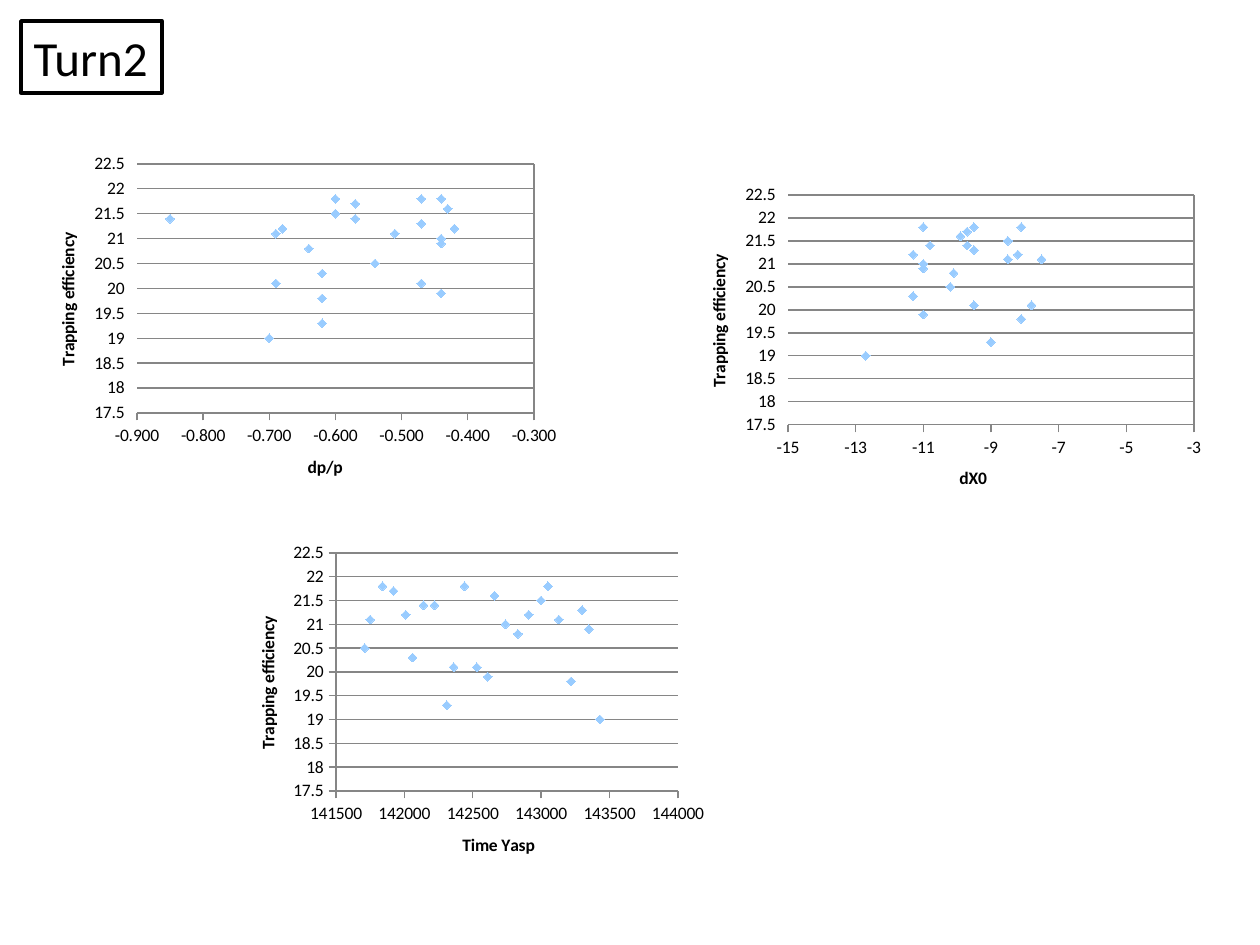
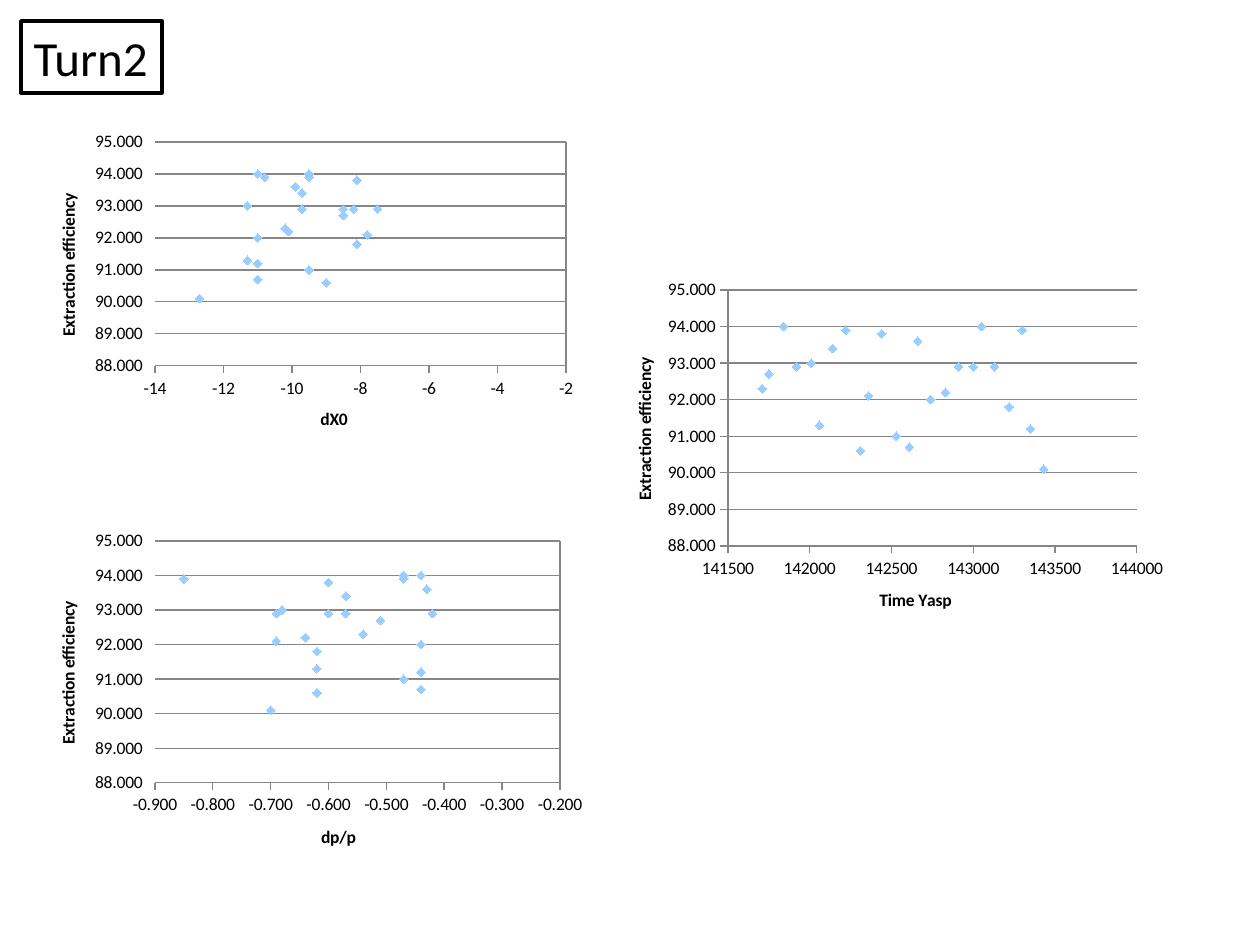
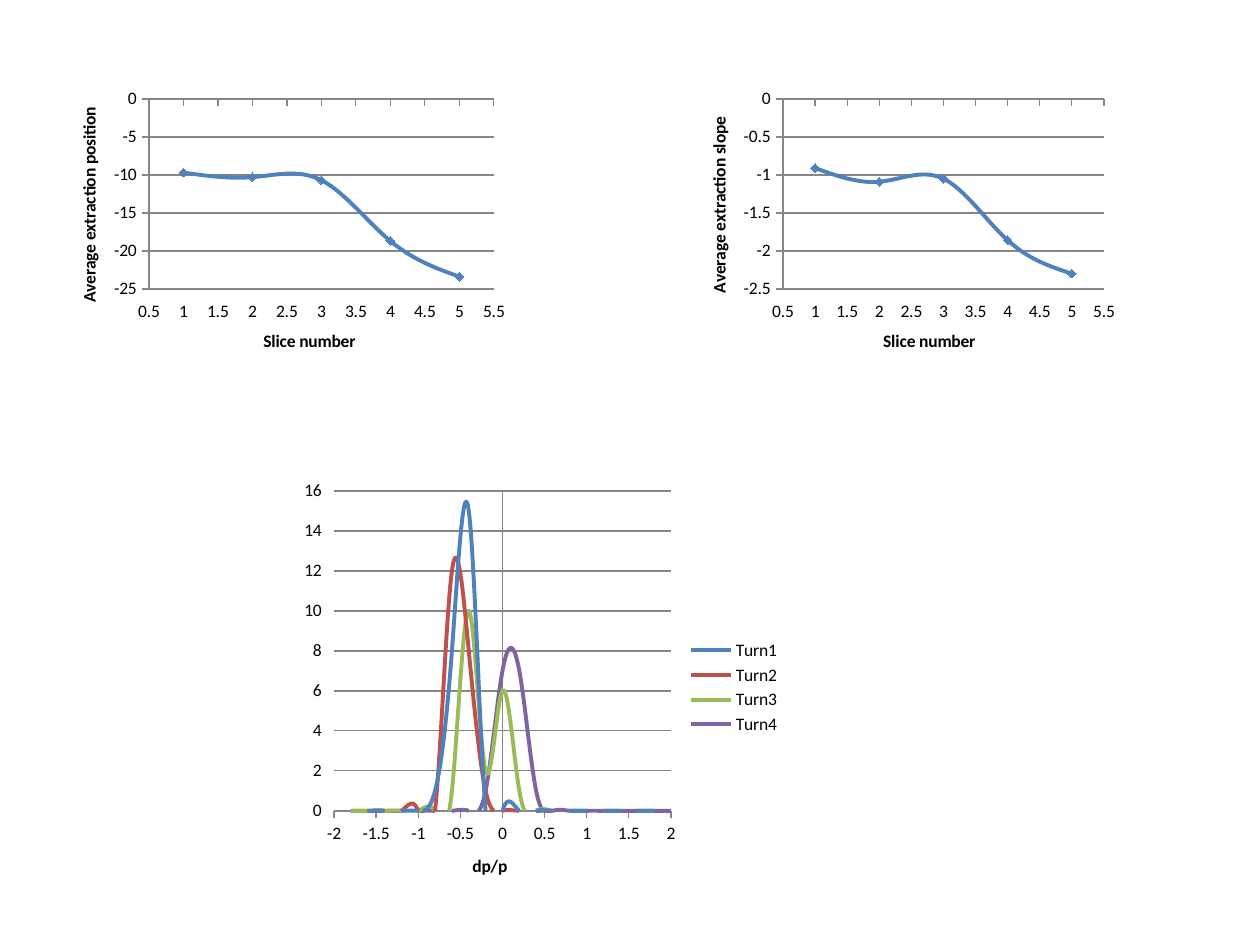
from lxml import etree
from pptx import Presentation
from pptx.chart.data import XyChartData
from pptx.dml.color import RGBColor
from pptx.enum.chart import (XL_CHART_TYPE, XL_LEGEND_POSITION, XL_MARKER_STYLE,
                             XL_TICK_LABEL_POSITION, XL_TICK_MARK)
from pptx.enum.text import MSO_ANCHOR, MSO_AUTO_SIZE, PP_ALIGN
from pptx.oxml.ns import qn
from pptx.util import Emu, Pt

PX = 914400 // 126
FONT = "Calibri"
COLORS = {"text": "000000", "paper": "FFFFFF", "grid": "868686", "point": "99CCFF",
          "blue": "4F81BD", "red": "C0504D", "green": "9BBB59", "purple": "8064A2"}
TITLE_BOX = (21, 21, 141, 72)

POINTS = XL_CHART_TYPE.XY_SCATTER
LINES_MARKED = XL_CHART_TYPE.XY_SCATTER_LINES
CURVE_MARKED = XL_CHART_TYPE.XY_SCATTER_SMOOTH
CURVE = XL_CHART_TYPE.XY_SCATTER_SMOOTH_NO_MARKERS
LOW = XL_TICK_LABEL_POSITION.LOW
NEXT_TO = XL_TICK_LABEL_POSITION.NEXT_TO_AXIS
OUTSIDE, NO_TICK = XL_TICK_MARK.OUTSIDE, XL_TICK_MARK.NONE
DIAMOND = XL_MARKER_STYLE.DIAMOND
RIGHT = XL_LEGEND_POSITION.RIGHT

TRAPPING = [20.5, 21.1, 21.8, 21.7, 21.2, 20.3, 21.4, 21.4, 19.3, 20.1, 21.8, 20.1,
            19.9, 21.6, 21, 20.8, 21.2, 21.5, 21.8, 21.1, 19.8, 21.3, 20.9, 19]
EXTRACTION = [92.3, 92.7, 94, 92.9, 93, 91.3, 93.4, 93.9, 90.6, 92.1, 93.8, 91,
              90.7, 93.6, 92, 92.2, 92.9, 92.9, 94, 92.9, 91.8, 93.9, 91.2, 90.1]
DP_P = [-0.54, -0.51, -0.47, -0.57, -0.68, -0.62, -0.57, -0.85, -0.62, -0.69, -0.6, -0.47,
        -0.44, -0.43, -0.44, -0.64, -0.42, -0.6, -0.44, -0.69, -0.62, -0.47, -0.44, -0.7]
DX0 = [-10.2, -8.5, -9.5, -9.7, -11.3, -11.3, -9.7, -10.8, -9, -7.8, -8.1, -9.5,
       -11, -9.9, -11, -10.1, -8.2, -8.5, -11, -7.5, -8.1, -9.5, -11, -12.7]
TIME = [141710, 141750, 141840, 141920, 142010, 142060, 142140, 142220,
        142310, 142360, 142440, 142530, 142610, 142660, 142740, 142830,
        142910, 143000, 143050, 143130, 143220, 143300, 143350, 143430]
SLICES = [1, 2, 3, 4, 5]
POSITION = [-9.7, -10.3, -10.7, -18.7, -23.4]
SLOPE = [-0.91, -1.09, -1.05, -1.86, -2.3]
MOMENTUM = [round(-1.8 + 0.2 * i, 1) for i in range(20)]
# Values of each turn from its first non-zero bin: (name, colour, bin, values)
TURNS = [("Turn1", "blue", 5, [1, 8, 15]),
         ("Turn2", "red", 6, [12, 8, 1]),
         ("Turn3", "green", 6, [1, 10, 2, 6, 1]),
         ("Turn4", "purple", 8, [1, 7, 7, 1])]

# Axes: (title, minimum, maximum, major unit, number format)
DP_P_AXIS = ("dp/p", -0.9, -0.3, 0.1, "0.000")
DP_P_WIDE = ("dp/p", -0.9, -0.2, 0.1, "0.000")
DX0_AXIS = ("dX0", -15, -3, 2, "General")
DX0_WIDE = ("dX0", -14, -2, 2, "General")
TIME_AXIS = ("Time Yasp", 141500, 144000, 500, "General")
SLICE_AXIS = ("Slice number", 0.5, 5.5, 0.5, "General")
MOMENTUM_AXIS = ("dp/p", -2, 2, 0.5, "General")
TRAPPING_AXIS = ("Trapping efficiency", 17.5, 22.5, 0.5, "General")
EXTRACTION_AXIS = ("Extraction efficiency", 88, 95, 1, "0.000")
POSITION_AXIS = ("Average extraction position", -25, 0, 5, "General")
SLOPE_AXIS = ("Average extraction slope", -2.5, 0, 0.5, "General")
COUNT_AXIS = (None, 0, 16, 2, "General")


def rgb(name):
    return RGBColor.from_string(COLORS[name])


def px(*lengths):
    return [Emu(n * PX) for n in lengths]


def style_font(font, size, bold=False):
    font.name, font.size, font.bold = FONT, Pt(size), bold
    font.color.rgb = rgb("text")


def style_line(line, color, width):
    line.color.rgb = rgb(color)
    line.width = Pt(width)


def add_title(s, text):
    sp = s.shapes.title
    sp.left, sp.top, sp.width, sp.height = px(*TITLE_BOX)
    sp.fill.solid()
    sp.fill.fore_color.rgb = rgb("paper")
    style_line(sp.line, "text", 2)
    tf = sp.text_frame
    tf.text = text
    tf.word_wrap = False
    tf.auto_size = MSO_AUTO_SIZE.NONE
    tf.vertical_anchor = MSO_ANCHOR.MIDDLE
    p = tf.paragraphs[0]
    p.alignment = PP_ALIGN.LEFT
    style_font(p.runs[0].font, 28)


def place_plot(chart, box, plot):
    """Fix the inner plot area, given in px relative to the chart box."""
    area = chart._chartSpace.chart.plotArea
    for old in area.findall(qn("c:layout")):
        area.remove(old)
    layout = etree.Element(qn("c:layout"))
    manual = etree.SubElement(layout, qn("c:manualLayout"))
    x, y, w, h = plot
    settings = {"layoutTarget": "inner", "xMode": "edge", "yMode": "edge",
                "x": x / box[2], "y": y / box[3], "w": w / box[2], "h": h / box[3]}
    for tag, value in settings.items():
        etree.SubElement(manual, qn("c:" + tag)).set("val", str(value))
    area.insert(0, layout)


def style_axis(axis, settings, labels, vertical=False):
    title, axis.minimum_scale, axis.maximum_scale, axis.major_unit, number = settings
    axis.has_major_gridlines = vertical
    if vertical:
        style_line(axis.major_gridlines.format.line, "grid", 0.75)
    style_line(axis.format.line, "grid", 0.75)
    axis.major_tick_mark = NO_TICK if vertical and labels == LOW else OUTSIDE
    axis.minor_tick_mark = NO_TICK
    axis.tick_label_position = labels
    axis.tick_labels.number_format = number
    axis.tick_labels.number_format_is_linked = False
    style_font(axis.tick_labels.font, 10)
    axis.has_title = title is not None
    if title:
        tf = axis.axis_title.text_frame
        tf.text = title
        style_font(tf.paragraphs[0].runs[0].font, 10, bold=True)
        if vertical:
            tf._txBody.bodyPr.set("rot", "-5400000")
            tf._txBody.bodyPr.set("vert", "horz")


def smooth_series(series):
    ser = series._element
    for old in ser.findall(qn("c:smooth")):
        ser.remove(old)
    smooth = etree.Element(qn("c:smooth"))
    smooth.set("val", "1")
    ser.find(qn("c:yVal")).addnext(smooth)


def style_series(series, kind, color):
    if kind == POINTS:
        series.format.line.fill.background()
    else:
        style_line(series.format.line, color, 2.25)
        smooth_series(series)
    marker = series.marker
    if kind == CURVE:
        marker.style = XL_MARKER_STYLE.NONE
        return
    marker.style, marker.size = DIAMOND, 5
    marker.format.fill.solid()
    marker.format.fill.fore_color.rgb = rgb(color)
    style_line(marker.format.line, color, 0.75)


def add_xy_chart(s, box, plot, kind, x_axis, y_axis, lines, x_labels=NEXT_TO, y_labels=NEXT_TO):
    """Add a scatter chart; lines holds (name, colour, x values, y values)."""
    data = XyChartData()
    for name, _, xs, ys in lines:
        series = data.add_series(name)
        for x, y in zip(xs, ys):
            series.add_data_point(x, y)
    chart = s.shapes.add_chart(kind, *px(*box), data).chart
    style_font(chart.font, 10)
    chart.has_title = False
    chart.has_legend = len(lines) > 1
    if chart.has_legend:
        chart.legend.position = RIGHT
        chart.legend.include_in_layout = False
        style_font(chart.legend.font, 10)
    chart.plots[0].vary_by_categories = False
    for series, line in zip(chart.plots[0].series, lines):
        style_series(series, kind, line[1])
    style_axis(chart.category_axis, x_axis, x_labels)
    style_axis(chart.value_axis, y_axis, y_labels, vertical=True)
    place_plot(chart, box, plot)


def add_efficiency_slide(prs, y_axis, ys, panels):
    """Add a titled slide plotting one efficiency against several quantities."""
    s = prs.slides.add_slide(prs.slide_layouts.get_by_name("Title Only"))
    add_title(s, "Turn2")
    for box, plot, x_axis, xs, y_labels in panels:
        add_xy_chart(s, box, plot, POINTS, x_axis, y_axis,
                     [(y_axis[0], "point", xs, ys)], y_labels=y_labels)


def add_slices_slide(prs):
    s = prs.slides.add_slide(prs.slide_layouts.get_by_name("Blank"))
    turns = [(name, color, MOMENTUM, ([0] * first + peak + [0] * 20)[:20])
             for name, color, first, peak in TURNS]
    add_xy_chart(s, (294, 472, 499, 431), (40, 19, 337, 320), CURVE,
                 MOMENTUM_AXIS, COUNT_AXIS, turns, y_labels=LOW)
    for box, plot, kind, y_axis, ys in [
            ((53, 84, 462, 294), (96, 15, 345, 190), LINES_MARKED, POSITION_AXIS, POSITION),
            ((683, 84, 441, 294), (100, 15, 321, 190), CURVE_MARKED, SLOPE_AXIS, SLOPE)]:
        add_xy_chart(s, box, plot, kind, SLICE_AXIS, y_axis,
                     [(y_axis[0], "blue", SLICES, ys)], x_labels=LOW)


def main():
    prs = Presentation()
    prs.slide_width, prs.slide_height = px(1260, 945)
    add_efficiency_slide(prs, TRAPPING_AXIS, TRAPPING, [
        ((32, 147, 535, 357), (105, 17, 397, 249), DP_P_AXIS, DP_P, LOW),
        ((683, 179, 529, 336), (105, 16, 406, 230), DX0_AXIS, DX0, LOW),
        ((231, 535, 483, 345), (105, 18, 342, 238), TIME_AXIS, TIME, NEXT_TO)])
    add_efficiency_slide(prs, EXTRACTION_AXIS, EXTRACTION, [
        ((32, 126, 553, 330), (123, 16, 411, 224), DX0_WIDE, DX0, LOW),
        ((32, 525, 562, 349), (123, 16, 405, 242), DP_P_WIDE, DP_P, LOW),
        ((630, 273, 557, 365), (98, 17, 409, 256), TIME_AXIS, TIME, NEXT_TO)])
    add_slices_slide(prs)
    prs.save("out.pptx")


if __name__ == "__main__":
    main()
